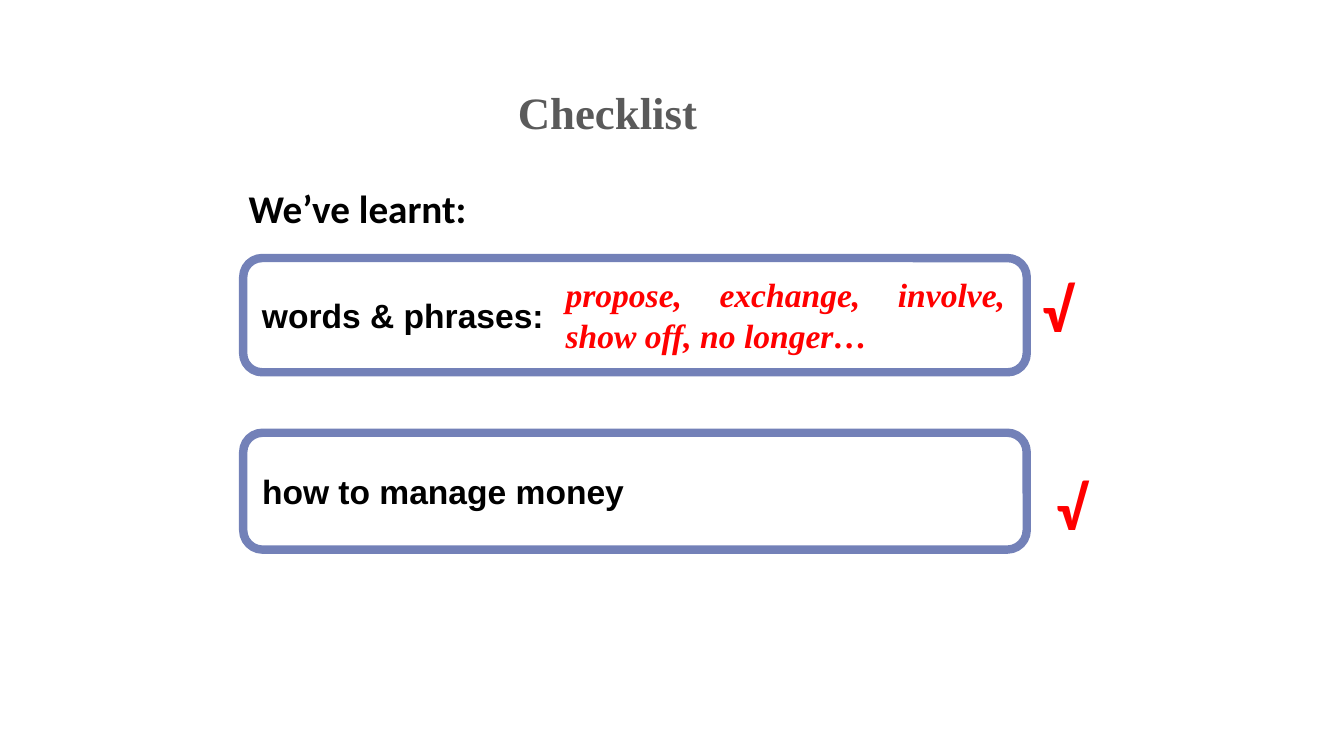
from pptx import Presentation
from pptx.dml.color import RGBColor
from pptx.enum.shapes import MSO_SHAPE
from pptx.enum.text import MSO_ANCHOR, MSO_AUTO_SIZE, PP_ALIGN
from pptx.oxml.ns import qn
from pptx.util import Inches, Pt

COLORS = {"gray": "5A5A5A", "black": "000000", "red": "FF0000",
          "white": "FFFFFF", "blue": "7381B8"}


def place(shape, left, top, width, height):
    shape.left, shape.top = Inches(left), Inches(top)
    shape.width, shape.height = Inches(width), Inches(height)


def write(shape, text, size, font, color="black", italic=False,
          align=PP_ALIGN.LEFT, anchor=MSO_ANCHOR.TOP):
    """Put one bold paragraph without a bullet into the shape."""
    frame = shape.text_frame
    frame.word_wrap = True
    frame.auto_size = MSO_AUTO_SIZE.NONE
    frame.vertical_anchor = anchor
    para = frame.paragraphs[0]
    props = para._p.get_or_add_pPr()
    props.set("marL", "0")
    props.set("indent", "0")
    props.append(props.makeelement(qn("a:buNone"), {}))
    para.alignment = align
    para.space_before = Pt(0)
    run = para.add_run()
    run.text = text
    run.font.size = Pt(size)
    run.font.name = font
    run.font.bold = True
    run.font.italic = italic
    run.font.color.rgb = RGBColor.from_string(COLORS[color])


prs = Presentation()
prs.slide_width = Inches(10)
prs.slide_height = Inches(10) * 9 // 16
slide = prs.slides.add_slide(prs.slide_layouts[1])
shapes = slide.shapes

title = shapes.title
place(title, 0.02, 0.58, 9, 0.94)
write(title, "Checklist", 24, "Times New Roman", color="gray",
      align=PP_ALIGN.CENTER)

body = slide.placeholders[1]
place(body, 1.75, 1.32, 6.75, 0.85)
write(body, "We’ve learnt:", 21, "Calibri")

for top, height, text in [(1.92, 0.85, "words & phrases:"),
                          (3.22, 0.87, "how to manage money")]:
    box = shapes.add_shape(MSO_SHAPE.ROUNDED_RECTANGLE, Inches(1.81),
                           Inches(top), Inches(5.83), Inches(height))
    box.shadow.inherit = False
    box.fill.solid()
    box.fill.fore_color.rgb = RGBColor.from_string(COLORS["white"])
    box.line.color.rgb = RGBColor.from_string(COLORS["blue"])
    box.line.width = Pt(4.5)
    write(box, text, 18, "Arial", anchor=MSO_ANCHOR.MIDDLE)

for left, top, width in [(7.66, 1.97, 0.57), (7.76, 3.44, 0.59)]:
    tick = shapes.add_textbox(Inches(left), Inches(top),
                              Inches(width), Inches(0.66))
    write(tick, "√", 33, "Calibri", color="red")

words = shapes.add_textbox(Inches(4.11), Inches(1.99),
                           Inches(3.47), Inches(0.71))
write(words, "propose, exchange, involve, show off, no longer…", 18,
      "Times New Roman", color="red", italic=True, align=PP_ALIGN.JUSTIFY)

prs.save("out.pptx")
